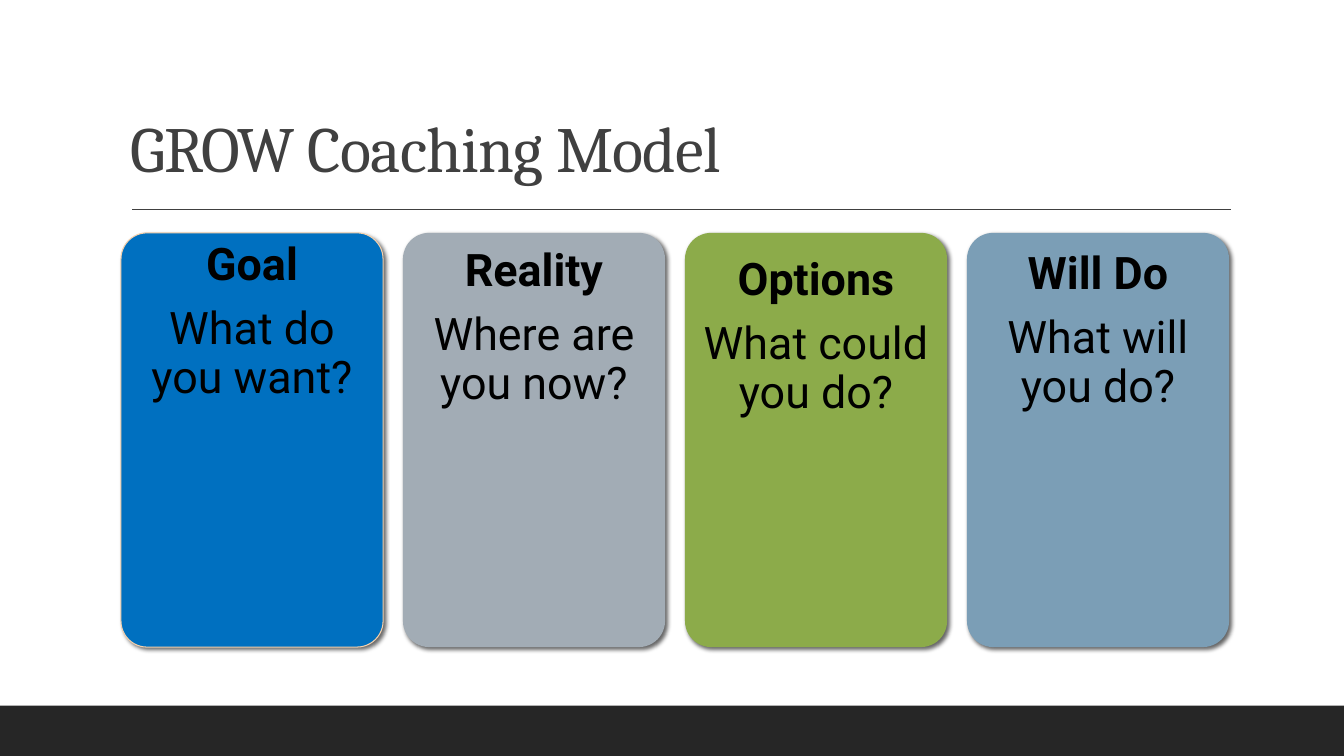
import pptx
import pptx.util
import pptx.dml.color
import pptx.enum.shapes
import pptx.enum.text
import pptx.oxml
import pptx.oxml.ns
from dataclasses import dataclass

TITLE = "GROW Coaching Model"
STEPS = [
    {"name": "Goal", "question": "What do you want?", "fill": "0070C0", "outline": "F6D1AD", "text_top": 2.4, "inset": 0.13},
    {"name": "Reality", "question": "Where are you now?", "fill": "A2ACB5", "outline": None, "text_top": 2.46, "inset": 0.06},
    {"name": "Options", "question": "What could you do?", "fill": "8CAB4A", "outline": None, "text_top": 2.55, "inset": 0.04},
    {"name": "Will Do", "question": "What will you do?", "fill": "7B9EB6", "outline": None, "text_top": 2.49, "inset": 0.13},
]


@dataclass(frozen=True)
class Theme:
    title_font: str = "Cambria"
    body_font: str = "Roboto"
    title_size: int = 46
    body_size: int = 32
    title_color: str = "404040"
    body_color: str = "000000"
    footer_color: str = "262626"


THEME = Theme()
Inches = pptx.util.Inches
Pt = pptx.util.Pt
SLIDE_WIDTH, SLIDE_HEIGHT = 13.33, 7.5
FOOTER_HEIGHT = 0.5
CARD_LEFT, CARD_TOP, CARD_WIDTH, CARD_HEIGHT = 1.2, 2.31, 2.6, 4.11
CARD_PITCH = 2.797
TEXT_HEIGHT = 1.7


def color(value):
    return pptx.dml.color.RGBColor.from_string(value)


def add_block(slide, kind, box, fill, outline=None):
    shape = slide.shapes.add_shape(kind, *map(Inches, box))
    shape.shadow.inherit = False
    shape.fill.solid()
    shape.fill.fore_color.rgb = color(fill)
    if outline:
        shape.line.color.rgb = color(outline)
        shape.line.width = Pt(0.75)
    else:
        shape.line.fill.background()
    return shape


def add_text(slide, box, inset, anchor):
    frame = slide.shapes.add_textbox(*map(Inches, box)).text_frame
    frame.word_wrap = True
    frame.vertical_anchor = anchor
    frame.margin_left = frame.margin_right = Inches(inset)
    frame.margin_top = frame.margin_bottom = 0
    return frame


def style(paragraph, text, font, size, font_color):
    paragraph.text = text
    paragraph.line_spacing = 0.9
    paragraph.font.name = font
    paragraph.font.size = Pt(size)
    paragraph.font.color.rgb = color(font_color)


def drop_shadow(shape):
    effects = shape._element.spPr.find(pptx.oxml.ns.qn("a:effectLst"))
    effects.append(pptx.oxml.parse_xml(
        f'<a:outerShdw {pptx.oxml.ns.nsdecls("a")} blurRad="{Pt(3)}" dist="{Pt(2)}" '
        'dir="2700000" algn="br" rotWithShape="0"><a:srgbClr val="000000">'
        '<a:alpha val="60000"/></a:srgbClr></a:outerShdw>'))


def add_step(slide, left, step):
    card = add_block(slide, pptx.enum.shapes.MSO_SHAPE.ROUNDED_RECTANGLE,
                     (left, CARD_TOP, CARD_WIDTH, CARD_HEIGHT), step["fill"], step["outline"])
    card.adjustments[0] = 0.1
    drop_shadow(card)
    frame = add_text(slide, (left, step["text_top"], CARD_WIDTH, TEXT_HEIGHT),
                     step["inset"], pptx.enum.text.MSO_ANCHOR.TOP)
    name, question = frame.paragraphs[0], frame.add_paragraph()
    for paragraph, text in ((name, step["name"]), (question, step["question"])):
        style(paragraph, text, THEME.body_font, THEME.body_size, THEME.body_color)
        paragraph.alignment = pptx.enum.text.PP_ALIGN.CENTER
    name.font.bold = True
    name.space_after = Pt(0.35 * THEME.body_size)


def main():
    presentation = pptx.Presentation()
    presentation.slide_width = Inches(SLIDE_WIDTH)
    presentation.slide_height = Inches(SLIDE_HEIGHT)
    slide = presentation.slides.add_slide(presentation.slide_layouts[6])

    add_block(slide, pptx.enum.shapes.MSO_SHAPE.RECTANGLE,
              (0, SLIDE_HEIGHT - FOOTER_HEIGHT, SLIDE_WIDTH, FOOTER_HEIGHT), THEME.footer_color)
    rule = slide.shapes.add_connector(pptx.enum.shapes.MSO_CONNECTOR.STRAIGHT,
                                      Inches(1.31), Inches(2.08), Inches(12.21), Inches(2.08))
    rule.line.color.rgb = color(THEME.title_color)
    rule.line.width = Pt(1)
    rule._element.spPr.append(pptx.oxml.parse_xml(f'<a:effectLst {pptx.oxml.ns.nsdecls("a")}/>'))

    title = add_text(slide, (1.2, 0.31, 11, 1.54), 0.1, pptx.enum.text.MSO_ANCHOR.BOTTOM)
    style(title.paragraphs[0], TITLE, THEME.title_font, THEME.title_size, THEME.title_color)
    title.paragraphs[0].runs[0]._r.get_or_add_rPr().set("spc", "-50")

    for index, step in enumerate(STEPS):
        add_step(slide, CARD_LEFT + index * CARD_PITCH, step)
    presentation.save("out.pptx")


if __name__ == "__main__":
    main()
